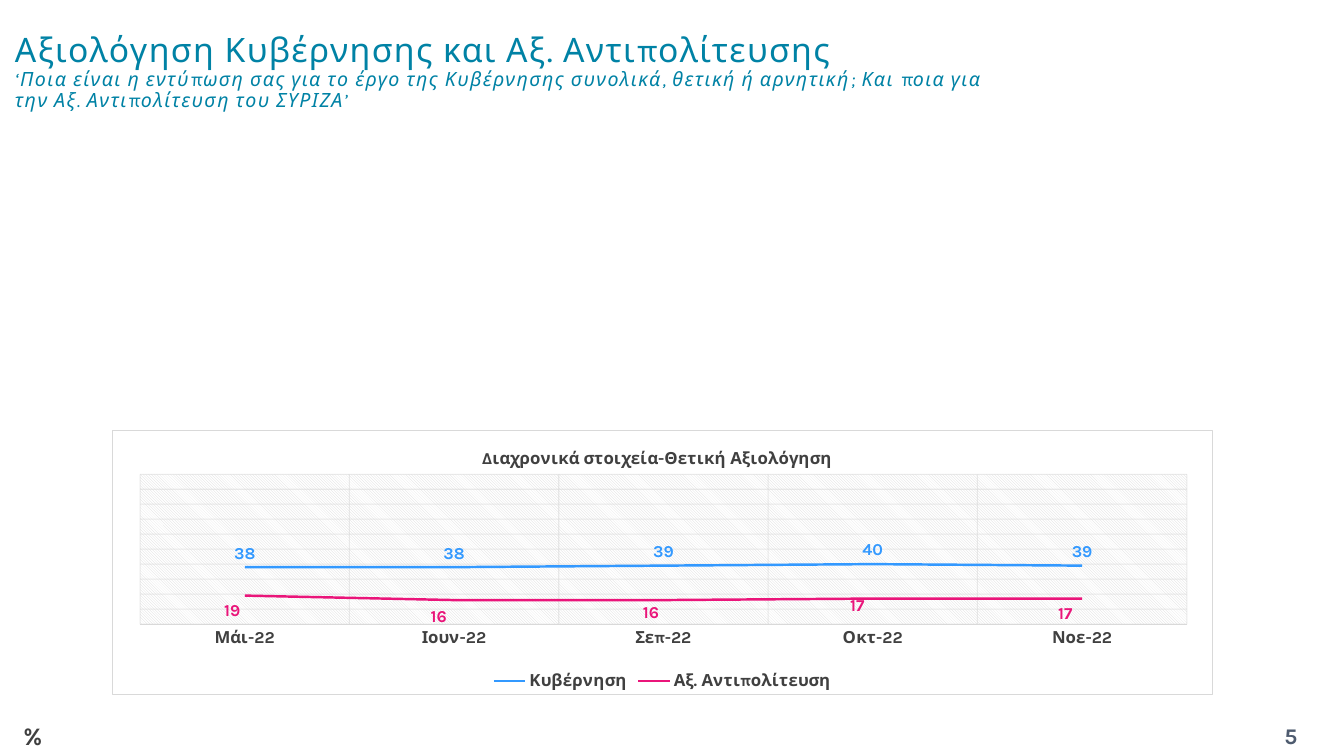
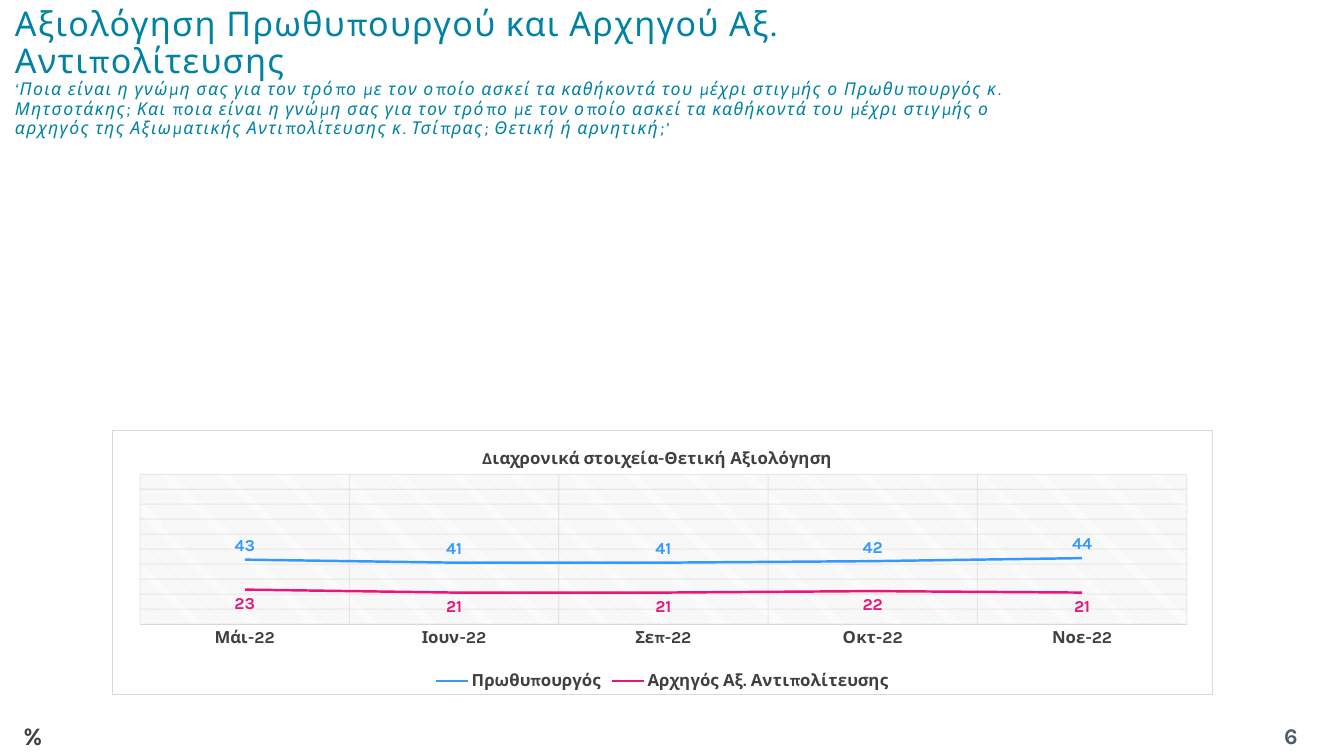
from pptx import Presentation
from pptx import util as u
from pptx.chart import data
from pptx.dml import color
from pptx.enum import chart as charts, text
from pptx.oxml import ns, parse_xml

FONT = "Karla"
COLORS = {
    "title": "0082A5",
    "page": "4E5B6F",
    "dark": "404040",
    "black": "000000",
    "grid": "D9D9D9",
    "white": "FFFFFF",
    "government": "3399FF",
    "opposition": "EA157A",
}
CHART_BOX = (80, 307.4, 786.2, 189.4)
PLOT_BOX = (19.7, 31.2, 748.4, 107.4)
CHART_TITLE_POINT = (262, 9)
CHART_TITLE = "Διαχρονικά στοιχεία-Θετική Αξιολόγηση"
MONTHS = ["Μάι-22", "Ιουν-22", "Σεπ-22", "Οκτ-22", "Νοε-22"]

SLIDES = [
    {
        "page": 5,
        "heading": "Αξιολόγηση Κυβέρνησης και Αξ. Αντιπολίτευσης",
        "question": "‘Ποια είναι η εντύπωση σας για το έργο της Κυβέρνησης συνολικά, "
                    "θετική ή αρνητική; Και ποια για την Αξ. Αντιπολίτευση του ΣΥΡΙΖΑ’",
        "width": 714.2,
        "sizes": (24, 14),
        "ratings": {
            "Κυβέρνηση": (38, 38, 39, 40, 39),
            "Αξ. Αντιπολίτευση": (19, 16, 16, 17, 17),
        },
        "label_shifts": [(-9, 1), (-11, 2), (-9, -1), (-11, -5), (-12, 1)],
    },
    {
        "page": 6,
        "heading": "Αξιολόγηση Πρωθυπουργού και Αρχηγού Αξ. Αντιπολίτευσης",
        "question": "‘Ποια είναι η γνώμη σας για τον τρόπο με τον οποίο ασκεί τα καθήκοντά "
                    "του μέχρι στιγμής ο Πρωθυπουργός κ. Μητσοτάκης; Και ποια είναι η γνώμη "
                    "σας για τον τρόπο με τον οποίο ασκεί τα καθήκοντά του μέχρι στιγμής ο "
                    "αρχηγός της Αξιωματικής Αντιπολίτευσης κ. Τσίπρας; Θετική ή αρνητική;’",
        "width": 737.3,
        "sizes": (24.3, 12.6),
        "ratings": {
            "Πρωθυπουργός": (43, 41, 41, 42, 44),
            "Αρχηγός Αξ. Αντιπολίτευσης": (23, 21, 21, 22, 21),
        },
        "label_shifts": [],
    },
]


def rgb(name):
    return color.RGBColor.from_string(COLORS[name])


def set_font(font, size, ink, **values):
    values = {"name": FONT, "size": u.Pt(size), **values}
    for attribute, value in values.items():
        setattr(font, attribute, value)
    font.color.rgb = rgb(ink)


def add_text_box(slide, box, anchor):
    """Return the first paragraph of a new wrapping text box."""
    frame = slide.shapes.add_textbox(*map(u.Pt, box)).text_frame
    frame.word_wrap = True
    frame.vertical_anchor = anchor
    return frame.paragraphs[0]


def add_title(slide, content):
    box = (3.6, 9.4, content["width"], 85)
    paragraph = add_text_box(slide, box, text.MSO_ANCHOR.MIDDLE)
    paragraph.line_spacing = 0.9
    heading_size, question_size = content["sizes"]
    heading = paragraph.add_run()
    heading.text = content["heading"]
    set_font(heading.font, heading_size, "title")
    paragraph.add_line_break()
    question = paragraph.add_run()
    question.text = content["question"]
    set_font(question.font, question_size, "title", italic=True)
    for run in (heading, question):
        run._r.get_or_add_rPr().set("spc", "100")


def add_footer(slide, page):
    unit = add_text_box(slide, (9.4, 511.2, 51.1, 28.8), text.MSO_ANCHOR.TOP)
    unit.text = "%"
    set_font(unit.font, 18, "dark", bold=True)
    number = add_text_box(slide, (884.2, 511.2, 75.6, 28.8), text.MSO_ANCHOR.MIDDLE)
    number.text = str(page)
    number.alignment = text.PP_ALIGN.CENTER
    set_font(number.font, 16, "page", bold=True)


def layout_xml(x, y, width=None, height=None):
    """Build a manual chart layout from lengths in points."""
    chart_width, chart_height = CHART_BOX[2:]
    parts = []
    if width:
        parts.append('<c:layoutTarget val="inner"/>')
    if width or (x, y) == CHART_TITLE_POINT:
        parts.append('<c:xMode val="edge"/><c:yMode val="edge"/>')
    fractions = {"x": x / chart_width, "y": y / chart_height}
    if width:
        fractions.update(w=width / chart_width, h=height / chart_height)
    parts += [f'<c:{tag} val="{value:.4f}"/>' for tag, value in fractions.items()]
    return parse_xml(f'<c:layout {ns.nsdecls("c")}><c:manualLayout>'
                     f'{"".join(parts)}</c:manualLayout></c:layout>')


def fill_xml(fill, line):
    return parse_xml(f'<c:spPr {ns.nsdecls("c", "a")}>{fill}{line}</c:spPr>')


def solid_xml(name):
    return f'<a:solidFill><a:srgbClr val="{COLORS[name]}"/></a:solidFill>'


def style_gridlines(gridlines):
    line = gridlines.format.line
    line.width = u.Pt(0.75)
    line.color.rgb = rgb("grid")
    for tint in gridlines._xAx.iter(ns.qn("a:srgbClr")):
        if tint.find(ns.qn("a:alpha")) is None:
            tint.append(parse_xml(f'<a:alpha {ns.nsdecls("a")} val="54000"/>'))


def style_axes(chart):
    months, percent = chart.category_axis, chart.value_axis
    for axis in (months, percent):
        axis.has_major_gridlines = True
        style_gridlines(axis.major_gridlines)
    months.major_tick_mark = months.minor_tick_mark = charts.XL_TICK_MARK.NONE
    set_font(months.tick_labels.font, 12, "dark", bold=True)
    months.format.line.color.rgb = rgb("grid")
    months.format.line.width = u.Pt(0.75)
    for attribute, value in {"minimum_scale": 0, "maximum_scale": 100,
                             "major_unit": 10, "visible": False}.items():
        setattr(percent, attribute, value)


def style_backgrounds(chart):
    plot_area = chart._chartSpace.chart.plotArea
    for old in plot_area.findall(ns.qn("c:layout")):
        plot_area.remove(old)
    plot_area.insert(0, layout_xml(*PLOT_BOX))
    hatch = (f'<a:pattFill prst="ltDnDiag"><a:fgClr><a:srgbClr val="{COLORS["grid"]}"/>'
             f'</a:fgClr><a:bgClr><a:srgbClr val="{COLORS["white"]}"/></a:bgClr></a:pattFill>')
    plot_area.append(fill_xml(hatch, "<a:ln><a:noFill/></a:ln>"))
    border = f'<a:ln w="{u.Pt(0.75)}">{solid_xml("grid")}</a:ln>'
    chart._chartSpace.chart.addnext(fill_xml(solid_xml("white"), border))


def style_title(chart):
    chart.has_title = True
    title = chart.chart_title
    title.include_in_layout = False
    paragraph = title.text_frame.paragraphs[0]
    run = paragraph.add_run()
    run.text = CHART_TITLE
    set_font(run.font, 12, "dark", bold=True)
    element = title._element
    for old in element.findall(ns.qn("c:layout")):
        element.remove(old)
    element.find(ns.qn("c:tx")).addnext(layout_xml(*CHART_TITLE_POINT))


def style_series(series, ink, position):
    series.smooth = False
    series.format.line.color.rgb = rgb(ink)
    series.format.line.width = u.Pt(1.75)
    labels = series.data_labels
    labels.show_value = True
    labels.position = position
    set_font(labels.font, 12, ink, bold=True)


def shift_labels(series, ink, position, shifts):
    """Move the value labels of a series off their usual places."""
    for index, shift in enumerate(shifts):
        label = series.points[index].data_label
        set_font(label.font, 12, ink, bold=True)
        label.position = position
    for element, shift in zip(series._element.iter(ns.qn("c:dLbl")), shifts):
        element.find(ns.qn("c:idx")).addnext(layout_xml(*shift))


def add_trend_chart(slide, content):
    ratings = data.CategoryChartData()
    ratings.categories = MONTHS
    for name, values in content["ratings"].items():
        ratings.add_series(name, values)
    chart = slide.shapes.add_chart(
        charts.XL_CHART_TYPE.LINE, *map(u.Pt, CHART_BOX), ratings).chart
    set_font(chart.font, 10, "black")
    chart.plots[0].vary_by_categories = False
    style_title(chart)
    style_axes(chart)
    style_backgrounds(chart)
    chart.has_legend = True
    chart.legend.position = charts.XL_LEGEND_POSITION.BOTTOM
    chart.legend.include_in_layout = False
    set_font(chart.legend.font, 12, "dark", bold=True)
    government, opposition = chart.plots[0].series
    above, below = charts.XL_LABEL_POSITION.ABOVE, charts.XL_LABEL_POSITION.BELOW
    style_series(government, "government", above)
    style_series(opposition, "opposition", below)
    shift_labels(opposition, "opposition", below, content["label_shifts"])


def main():
    deck = Presentation()
    deck.slide_width, deck.slide_height = u.Pt(960), u.Pt(540)
    for content in SLIDES:
        slide = deck.slides.add_slide(deck.slide_layouts[6])
        add_title(slide, content)
        add_footer(slide, content["page"])
        add_trend_chart(slide, content)
    deck.save("out.pptx")


if __name__ == "__main__":
    main()
